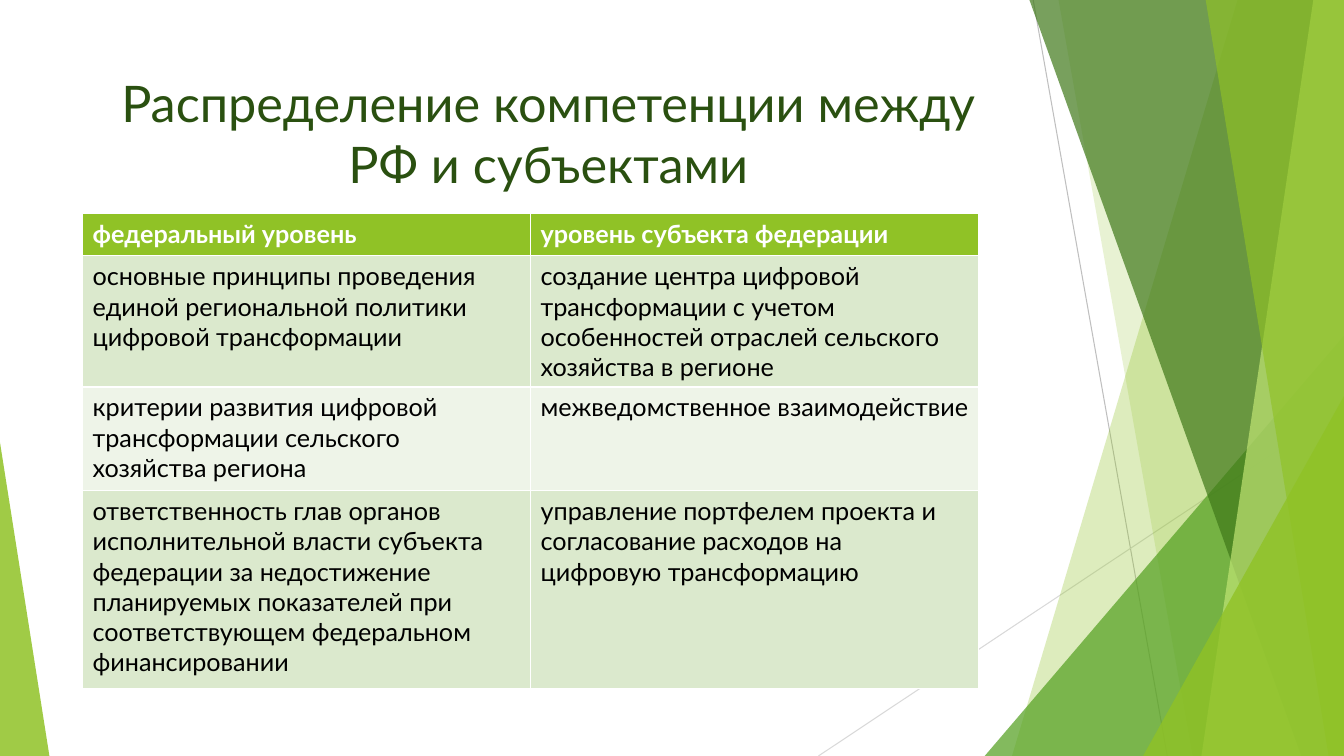
from lxml.etree import SubElement
from pptx import Presentation
from pptx.dml.color import RGBColor
from pptx.enum.shapes import MSO_CONNECTOR, MSO_SHAPE
from pptx.enum.text import MSO_ANCHOR, MSO_AUTO_SIZE, PP_ALIGN
from pptx.oxml.ns import qn
from pptx.util import Pt

WIDE, HIGH, TOP = 960, 540, -0.7
WHITE = RGBColor(0xFF, 0xFF, 0xFF)
BLACK = RGBColor(0x00, 0x00, 0x00)
LIME = RGBColor(0x90, 0xC2, 0x26)
LEAF = RGBColor(0x54, 0xA0, 0x21)
MOSS = RGBColor(0x3F, 0x78, 0x19)
PALE = RGBColor(0xC0, 0xE4, 0x74)
PINE = RGBColor(0x2A, 0x50, 0x10)
BAND = RGBColor(0xDB, 0xE9, 0xCD)
SOFT = RGBColor(0xEE, 0xF4, 0xE8)
GREY = RGBColor(0xBF, 0xBF, 0xBF)
MIST = RGBColor(0xD9, 0xD9, 0xD9)

HEADING = "Распределение компетенции между РФ и субъектами"
ROWS = [
    (30.2, LIME, "федеральный уровень", "уровень субъекта федерации"),
    (93.6, BAND,
     "основные принципы проведения единой региональной политики цифровой трансформации",
     "создание центра цифровой трансформации с учетом особенностей отраслей сельского хозяйства в регионе"),
    (74.2, SOFT,
     "критерии развития цифровой трансформации сельского хозяйства региона",
     "межведомственное взаимодействие"),
    (141.1, BAND,
     "ответственность глав органов исполнительной власти субъекта федерации за недостижение "
     "планируемых показателей при соответствующем федеральном финансировании",
     "управление портфелем проекта и согласование расходов на цифровую трансформацию"),
]


class Deck:
    face = "Lato"
    text = {
        "title": {"size": Pt(36), "bold": False, "tint": PINE},
        "head": {"size": Pt(18), "bold": True, "tint": WHITE},
        "body": {"size": Pt(18), "bold": False, "tint": BLACK},
    }

    def __init__(self):
        self.show = Presentation()
        self.show.slide_width, self.show.slide_height = Pt(WIDE), Pt(HIGH)
        self.slide = self.show.slides.add_slide(self.show.slide_layouts[5])
        self.shapes = self.slide.shapes

    def label(self, frame, words, kind, align):
        para = frame.paragraphs[0]
        para.alignment = align
        run = para.add_run()
        run.text = words
        run.font.name = self.face
        for name, value in self.text[kind].items():
            if name == "tint":
                run.font.color.rgb = value
            else:
                setattr(run.font, name, value)

    def paint(self, shape, tint, alpha):
        shape.shadow.inherit = False
        shape.line.fill.background()
        shape.fill.solid()
        shape.fill.fore_color.rgb = tint
        color = shape.element.spPr.find(qn("a:solidFill"))[0]
        SubElement(color, qn("a:alpha"), val=str(alpha * 1000))

    def line(self, start, end, tint):
        ends = [Pt(v) for v in (*start, *end)]
        link = self.shapes.add_connector(MSO_CONNECTOR.STRAIGHT, *ends)
        link.line.width = Pt(0.75)
        link.line.color.rgb = tint
        SubElement(link.element.spPr, qn("a:effectLst"))

    def blade(self, top, foot, tint, alpha):
        form = self.shapes.build_freeform(Pt(top), Pt(TOP), scale=1.0)
        spots = [(WIDE, TOP), (WIDE, HIGH), (foot, HIGH)]
        form.add_line_segments([(Pt(x), Pt(y)) for x, y in spots], close=True)
        self.paint(form.convert_to_shape(), tint, alpha)

    def wedge(self, left, top, right, peak, tint, alpha):
        box = [Pt(v) for v in (left, top, right - left, HIGH - top)]
        shape = self.shapes.add_shape(MSO_SHAPE.ISOSCELES_TRIANGLE, *box)
        shape.adjustments[0] = peak
        self.paint(shape, tint, alpha)

    def title(self, words, box):
        holder = self.shapes.title
        for name, value in zip(("left", "top", "width", "height"), box):
            setattr(holder, name, Pt(value))
        frame = holder.text_frame
        form = {"word_wrap": True, "auto_size": MSO_AUTO_SIZE.NONE,
                "vertical_anchor": MSO_ANCHOR.TOP}
        for name, value in form.items():
            setattr(frame, name, value)
        self.label(frame, words, "title", PP_ALIGN.CENTER)

    def table(self, rows, left, top, width):
        high = sum(row[0] for row in rows)
        box = [Pt(v) for v in (left, top, width, high)]
        grid = self.shapes.add_table(len(rows), 2, *box).table
        for i, (tall, tint, *words) in enumerate(rows):
            grid.rows[i].height = Pt(tall)
            for j, text in enumerate(words):
                cell = grid.cell(i, j)
                cell.fill.solid()
                cell.fill.fore_color.rgb = tint
                self.label(cell.text_frame, text, "body" if i else "head", PP_ALIGN.LEFT)


def main():
    deck = Deck()
    deck.line((738, 0), (833.8, HIGH), GREY)
    deck.line((WIDE, 290.2), (584.6, HIGH), MIST)
    deck.blade(884.2, 722.9, LIME, 30)
    deck.blade(756, 851.8, LIME, 20)
    deck.wedge(703.4, 239.8, WIDE, 1, LEAF, 72)
    deck.blade(735.1, 929.5, MOSS, 70)
    deck.blade(938.2, 858.2, PALE, 70)
    deck.blade(861.1, 949, LIME, 65)
    deck.wedge(816.5, 283, WIDE, 1, LIME, 80)
    deck.wedge(0, 316.1, 35.3, 0, LIME, 85)
    deck.title(HEADING, (53.3, 48.2, 676.8, 103.7))
    deck.table(ROWS, 59, 152.6, 640)
    deck.show.save("out.pptx")


if __name__ == "__main__":
    main()
